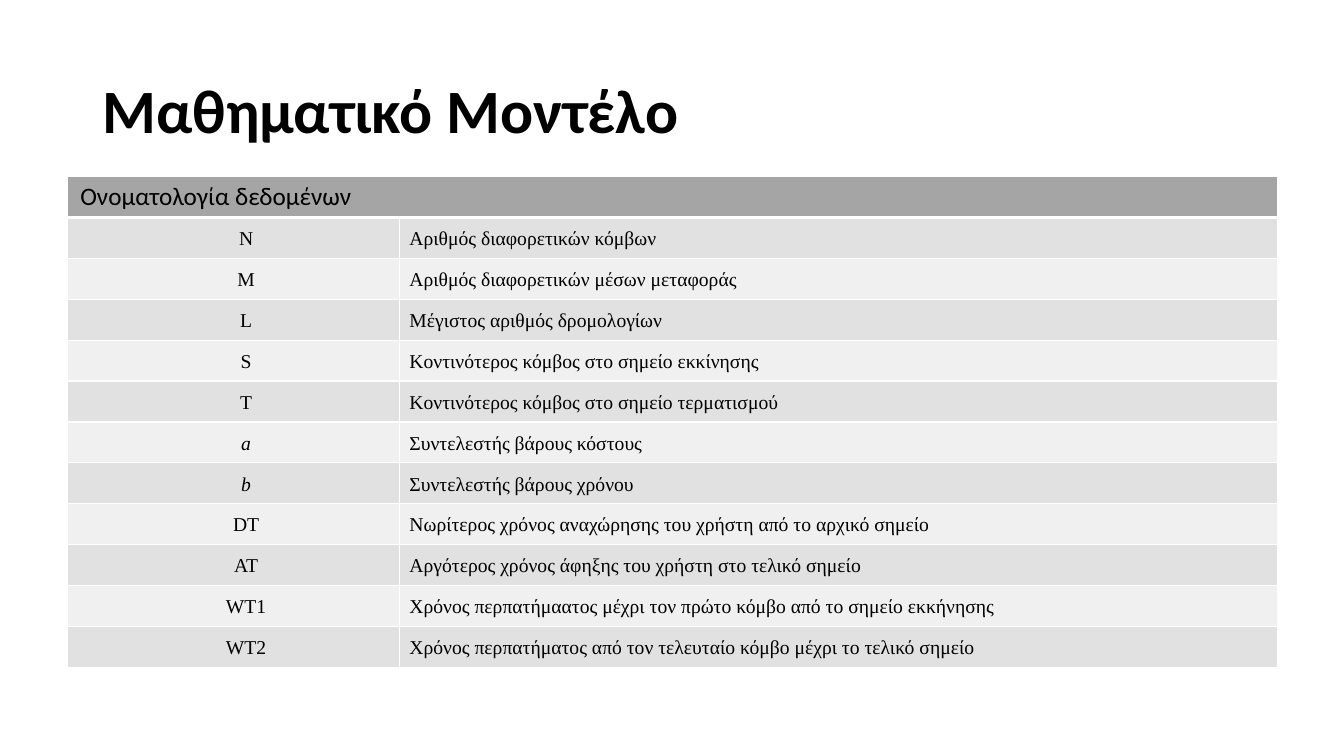
import pptx
import pptx.dml.color
import pptx.enum.text
import pptx.oxml
import pptx.oxml.ns
import pptx.util

Pt = pptx.util.Pt
ALIGN = pptx.enum.text.PP_ALIGN
ANCHOR = pptx.enum.text.MSO_ANCHOR

ROWS = [
    ("N", "Αριθμός διαφορετικών κόμβων"),
    ("M", "Αριθμός διαφορετικών μέσων μεταφοράς"),
    ("L", "Μέγιστος αριθμός δρομολογίων"),
    ("S", "Κοντινότερος κόμβος στο σημείο εκκίνησης"),
    ("T", "Κοντινότερος κόμβος στο σημείο τερματισμού"),
    ("a", "Συντελεστής βάρους κόστους"),
    ("b", "Συντελεστής βάρους χρόνου"),
    ("DT", "Νωρίτερος χρόνος αναχώρησης του χρήστη από το αρχικό σημείο"),
    ("AT", "Αργότερος χρόνος άφηξης του χρήστη στο τελικό σημείο"),
    ("WT1", "Χρόνος περπατήμαατος μέχρι τον πρώτο κόμβο από το σημείο εκκήνησης"),
    ("WT2", "Χρόνος περπατήματος από τον τελευταίο κόμβο μέχρι το τελικό σημείο"),
]


def color(value):
    return pptx.dml.color.RGBColor.from_string(value)


class NomenclatureSlide:
    heading_font = "Calibri"
    body_font = "Times New Roman"
    ink = "000000"
    border = "FFFFFF"
    header_fill = "A5A5A5"
    band_fills = ("E1E1E1", "F0F0F0")

    def __init__(self, presentation):
        self.slide = presentation.slides.add_slide(presentation.slide_layouts[6])

    def run(self, paragraph, text, size, font, bold=False, italic=False):
        run = paragraph.add_run()
        run.text = text
        run.font.size = Pt(size)
        run.font.name = font
        run.font.bold = bold
        run.font.italic = italic
        run.font.color.rgb = color(self.ink)

    def title(self, text, left, top, width, height):
        shape = self.slide.shapes.add_textbox(Pt(left), Pt(top), Pt(width), Pt(height))
        frame = shape.text_frame
        frame.word_wrap = True
        frame.vertical_anchor = ANCHOR.MIDDLE
        paragraph = frame.paragraphs[0]
        paragraph.line_spacing = 0.9
        self.run(paragraph, text, 44, self.heading_font, bold=True)

    def style_cell(self, cell, fill, margins, bottom=1):
        properties = cell._tc.get_or_add_tcPr()
        for side, width in (("L", 1), ("R", 1), ("T", 1), ("B", bottom)):
            properties.append(pptx.oxml.parse_xml(
                f'<a:ln{side} {pptx.oxml.ns.nsdecls("a")} w="{Pt(width)}">'
                f'<a:solidFill><a:srgbClr val="{self.border}"/></a:solidFill>'
                f'</a:ln{side}>'))
        cell.fill.solid()
        cell.fill.fore_color.rgb = color(fill)
        horizontal, vertical = margins
        cell.margin_left = cell.margin_right = Pt(horizontal)
        cell.margin_top = cell.margin_bottom = Pt(vertical)

    def body_cell(self, cell, text, fill, align, indent=0, italic=False):
        self.style_cell(cell, fill, (7.2, 0))
        paragraph = cell.text_frame.paragraphs[0]
        paragraph._p.get_or_add_pPr().set("marL", str(Pt(indent)))
        paragraph.alignment = align
        paragraph.line_spacing = 1.5
        self.run(paragraph, text, 14, self.body_font, italic=italic)

    def table(self, heading, rows, left, top, column_widths, row_height):
        count = len(rows) + 1
        table = self.slide.shapes.add_table(
            count, len(column_widths), Pt(left), Pt(top),
            Pt(sum(column_widths)), Pt(row_height * count)).table
        table.first_row = table.horz_banding = False
        for column, width in zip(table.columns, column_widths):
            column.width = Pt(width)
        for row in table.rows:
            row.height = Pt(row_height)

        header = table.cell(0, 0)
        header.merge(table.cell(0, 1))
        for index in range(len(column_widths)):
            self.style_cell(table.cell(0, index), self.header_fill, (9, 3.6), bottom=3)
        header.vertical_anchor = ANCHOR.MIDDLE
        self.run(header.text_frame.paragraphs[0], heading, 18, self.heading_font)

        for index, (symbol, meaning) in enumerate(rows, start=1):
            fill = self.band_fills[(index - 1) % 2]
            self.body_cell(table.cell(index, 0), symbol, fill, ALIGN.CENTER,
                           indent=18, italic=symbol.islower())
            self.body_cell(table.cell(index, 1), meaning, fill, ALIGN.JUSTIFY)


def main():
    presentation = pptx.Presentation()
    presentation.slide_width = Pt(960)
    presentation.slide_height = Pt(540)
    page = NomenclatureSlide(presentation)
    page.title("Μαθηματικό Μοντέλο", 66, 28.75, 828, 104.4)
    page.table("Ονοματολογία δεδομένων", ROWS, 48.4, 126.2, (236.9, 627.1), 29.2)
    presentation.save("out.pptx")


if __name__ == "__main__":
    main()
